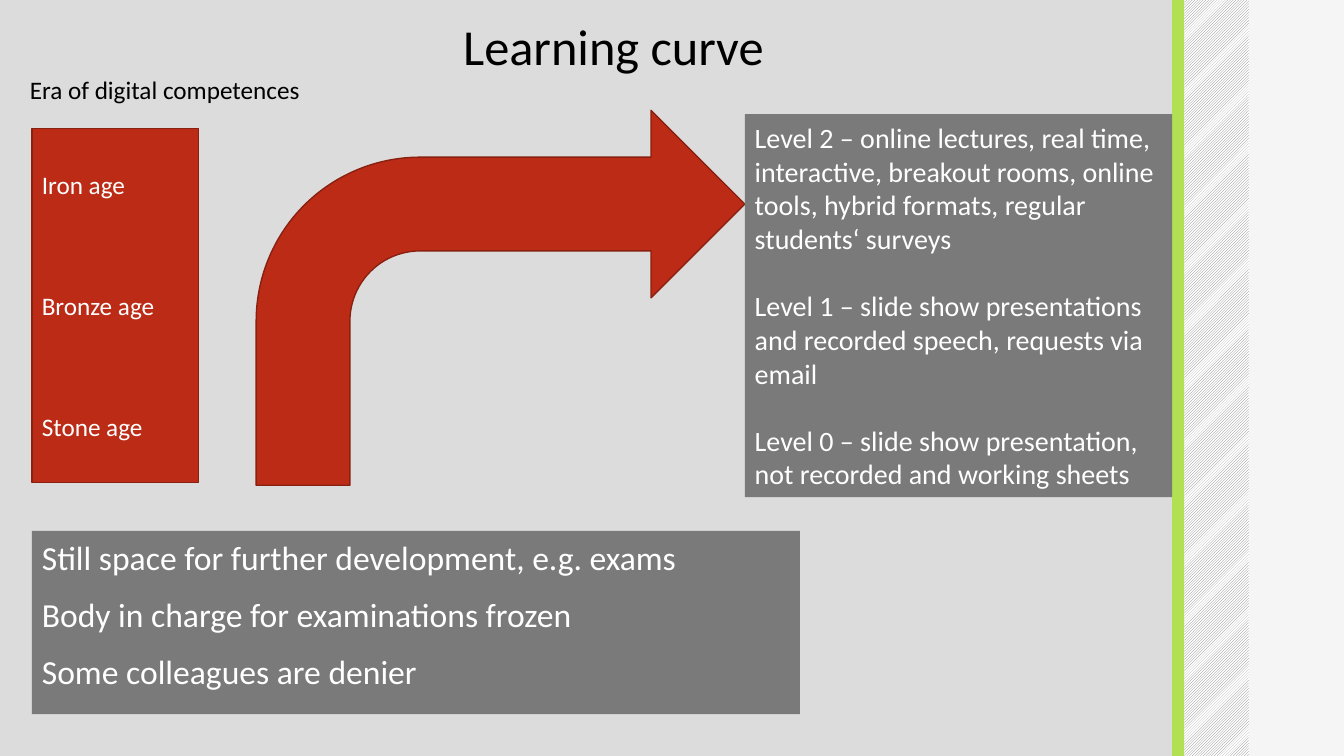
from pptx import Presentation
from pptx.dml.color import RGBColor
from pptx.enum.dml import MSO_PATTERN
from pptx.enum.shapes import MSO_SHAPE
from pptx.enum.text import MSO_ANCHOR, PP_ALIGN
from pptx.util import Pt


def color(value):
    return RGBColor.from_string(value)


def write(box, lines, size, ink, gap=0, **frame_format):
    frame = box.text_frame
    frame.word_wrap = True
    for name, value in frame_format.items():
        setattr(frame, name, value)
    for index, line in enumerate(lines):
        para = frame.paragraphs[0] if index == 0 else frame.add_paragraph()
        para.alignment = PP_ALIGN.LEFT
        if index:
            para.space_before = Pt(gap)
        span = para.add_run()
        span.text = line
        for name, value in {"name": "Calibri", "size": Pt(size)}.items():
            setattr(span.font, name, value)
        span.font.color.rgb = color(ink)


deck = Presentation()
deck.slide_width, deck.slide_height = Pt(960), Pt(540)
page = deck.slides.add_slide(deck.slide_layouts[6])
page.background.fill.solid()
page.background.fill.fore_color.rgb = color("F5F5F5")

RED, RED_EDGE, GRAY = "BB2B16", "8A2010", "7A7A7A"
shapes = {}
for part, kind, place, fill, edge in [
    ("panel", MSO_SHAPE.RECTANGLE, (0, 0, 837.4, 540), "DCDCDC", None),
    ("hatching", MSO_SHAPE.RECTANGLE, (846, 0, 46, 540), None, None),
    ("stripe", MSO_SHAPE.RECTANGLE, (837.2, 0, 8.6, 540), "B1E053", None),
    ("curve", MSO_SHAPE.BENT_ARROW, (183, 78.8, 349, 267.8), RED, RED_EDGE),
    ("levels", MSO_SHAPE.RECTANGLE, (532, 81.5, 305.2, 273.6), GRAY, None),
    ("ages", MSO_SHAPE.RECTANGLE, (22.8, 91.7, 119, 253), RED, RED_EDGE),
    ("outlook", MSO_SHAPE.RECTANGLE, (22.8, 379.2, 548.6, 131), GRAY, None),
]:
    shape = page.shapes.add_shape(kind, *map(Pt, place))
    shape.shadow.inherit = False
    if fill:
        shape.fill.solid()
        shape.fill.fore_color.rgb = color(fill)
    if edge:
        shape.line.color.rgb = color(edge)
        shape.line.width = Pt(1)
    else:
        shape.line.fill.background()
    shapes[part] = shape

hatching = shapes["hatching"].fill
hatching.patterned()
hatching.pattern = MSO_PATTERN.LIGHT_UPWARD_DIAGONAL
hatching.fore_color.rgb = color("808080")
hatching.back_color.rgb = color("FFFFFF")

title = page.shapes.add_textbox(Pt(330.8), Pt(15.6), Pt(500), Pt(40))
write(title, ["Learning curve"], 36, "000000", margin_left=0, margin_top=0)
title.text_frame.paragraphs[0].line_spacing = 0.9

era = page.shapes.add_textbox(Pt(14.2), Pt(49.7), Pt(209.5), Pt(29))
write(era, ["Era of digital competences"], 18, "000000", word_wrap=False)

middle = MSO_ANCHOR.MIDDLE
write(shapes["levels"], [
    "Level 2 – online lectures, real time, interactive, breakout rooms, "
    "online tools, hybrid formats, regular students‘ surveys",
    "Level 1 – slide show presentations and recorded speech, requests via email",
    "Level 0 – slide show presentation, not recorded and working sheets",
], 20, "FFFFFF", gap=24, vertical_anchor=middle)
write(shapes["ages"], ["Iron age", "Bronze age", "Stone age"],
      18, "FFFFFF", gap=64.8, vertical_anchor=middle)
write(shapes["outlook"], [
    "Still space for further development, e.g. exams",
    "Body in charge for examinations frozen",
    "Some colleagues are denier",
], 24, "FFFFFF", gap=12, vertical_anchor=middle, margin_bottom=Pt(15.6))

deck.save("out.pptx")
